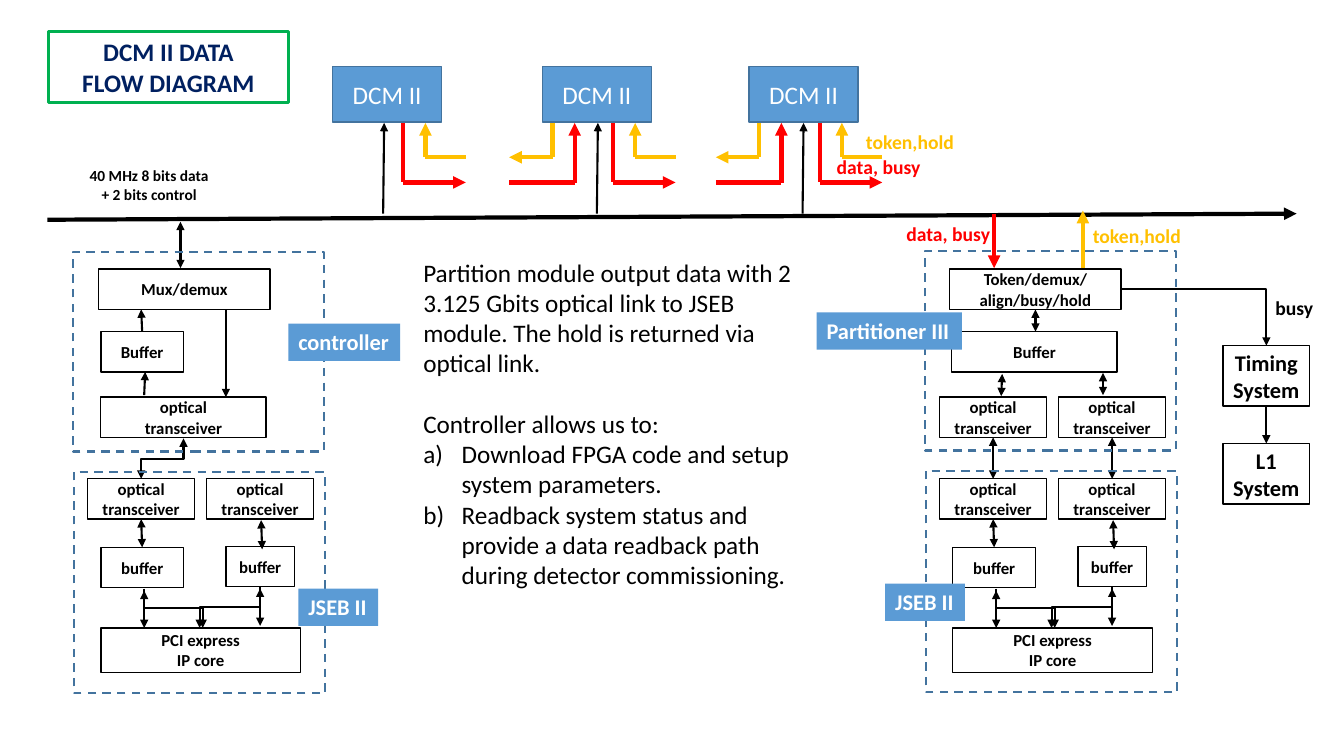
"""Builds the DCM II data flow diagram slide."""
from lxml.etree import SubElement
from pptx import Presentation
from pptx.dml.color import RGBColor
from pptx.enum.dml import MSO_LINE
from pptx.enum.shapes import MSO_CONNECTOR as LINK, MSO_SHAPE
from pptx.enum.text import MSO_ANCHOR, MSO_AUTO_SIZE, PP_ALIGN
from pptx.oxml.ns import qn
from pptx.util import Inches, Pt

BLACK, WHITE, RED, YELLOW = "000000", "FFFFFF", "FF0000", "FFC000"
BLUE, EDGE, NAVY, GREEN = "5B9BD5", "43739E", "002060", "00B050"
rgb = RGBColor.from_string

deck = Presentation()
deck.slide_width, deck.slide_height = Inches(13.33), Inches(7.5)
slide = deck.slides.add_slide(deck.slide_layouts[5])
shapes = slide.shapes


def write(holder, text, size, color, bold=True, align=PP_ALIGN.CENTER):
    frame = holder.text_frame
    frame.text = text
    for line in frame.paragraphs:
        line.alignment = align
        line.font.name, line.font.size, line.font.bold = "Calibri", Pt(size), bold
        line.font.color.rgb = rgb(color)
    return frame


def arrow(x1, y1, x2, y2, color=BLACK, width=1.5, ends="tail", kind=LINK.STRAIGHT):
    link = shapes.add_connector(kind, Inches(x1), Inches(y1), Inches(x2), Inches(y2))
    link.line.color.rgb, link.line.width = rgb(color), Pt(width)
    properties = link.element.spPr
    for end in ends.split():
        SubElement(properties.find(qn("a:ln")), qn(f"a:{end}End"), type="triangle")
    SubElement(properties, qn("a:effectLst"))
    return link


title = shapes.title
title.left, title.top, title.width, title.height = map(Inches, (0.48, 0.31, 2.38, 0.71))
title.line.color.rgb, title.line.width = rgb(GREEN), Pt(2)
title_frame = write(title, "DCM II DATA\nFLOW DIAGRAM", 18, NAVY)
title_frame.auto_size, title_frame.word_wrap = MSO_AUTO_SIZE.NONE, True
title_frame.vertical_anchor = MSO_ANCHOR.MIDDLE

arrow(0.47, 2.18, 12.86, 2.12, width=3)

modules = [(3.3, 3.8), (5.38, 5.92), (7.43, 7.96)]
transceiver = "optical\ntransceiver"
boxes = [
    ("Token/demux/\valign/busy/hold", 9.42, 2.67, 1.7, 0.4, 12),
    ("Buffer", 9.44, 3.29, 1.64, 0.4, 12),
    (transceiver, 9.32, 3.94, 1.06, 0.4, 12),
    (transceiver, 10.5, 3.94, 1.06, 0.4, 12),
    ("Timing\nSystem", 12.13, 3.43, 0.86, 0.6, 16),
    ("L1\nSystem", 12.13, 4.4, 0.86, 0.6, 16),
    ("Mux/demux", 0.98, 2.67, 1.7, 0.4, 12),
    ("Buffer", 1, 3.29, 0.82, 0.4, 12),
    (transceiver, 1, 3.94, 1.64, 0.4, 12),
]
side_offsets = (0, 8.45)
for dx in side_offsets:
    boxes += [
        (transceiver, 0.87 + dx, 4.75, 1.06, 0.4, 12),
        (transceiver, 2.05 + dx, 4.75, 1.06, 0.4, 12),
        ("buffer", 1 + dx, 5.43, 0.82, 0.4, 12),
        ("buffer", 2.24 + dx, 5.42, 0.68, 0.4, 12),
        ("PCI express\nIP core", 1 + dx, 6.23, 1.98, 0.44, 12),
    ]
boxes += [("DCM II", left, 0.66, 1.08, 0.55, 18) for left, _ in modules]
for text, x, y, w, h, size in boxes:
    is_module = text == "DCM II"
    box = shapes.add_shape(MSO_SHAPE.RECTANGLE, Inches(x), Inches(y), Inches(w), Inches(h))
    box.shadow.inherit = False
    box.fill.solid()
    box.fill.fore_color.rgb = rgb(BLUE if is_module else WHITE)
    box.line.color.rgb, box.line.width = rgb(EDGE if is_module else BLACK), Pt(1)
    frame = write(box, text, size, WHITE if is_module else BLACK, not is_module)
    frame.word_wrap, frame.vertical_anchor = True, MSO_ANCHOR.MIDDLE
    if size == 16:
        frame.margin_left = frame.margin_right = Inches(0.05)

for left, data_x in modules:
    arrow(data_x, 2.12, data_x + 0.01, 1.22)
    arrow(left + 1.32, 1.56, left + 0.92, 1.56, YELLOW, 3, "")
    arrow(left + 0.92, 1.56, left + 0.92, 1.22, YELLOW, 3)
    arrow(left + 0.7, 1.22, left + 0.7, 1.81, RED, 3, "")
    arrow(left + 0.7, 1.81, left + 1.32, 1.81, RED, 3)
for left, _ in modules[1:]:
    arrow(left + 0.1, 1.22, left + 0.1, 1.56, YELLOW, 3, "")
    arrow(left + 0.1, 1.56, left - 0.33, 1.56, YELLOW, 3)
    arrow(left - 0.33, 1.81, left + 0.32, 1.81, RED, 3, "")
    arrow(left + 0.32, 1.82, left + 0.32, 1.22, RED, 3)

arrow(9.86, 2.12, 9.86, 2.66, RED, 3)
arrow(10.74, 2.66, 10.74, 2.09, YELLOW, 3)
arrow(12.56, 4.03, 12.56, 4.4)
arrow(1.43, 3.92, 1.44, 3.69)
arrow(1.41, 3.29, 1.4, 3.07)
arrow(2.24, 3.07, 2.24, 3.94)

two_way = [
    (1.79, 2.66, 1.79, 2.2),
    (10.27, 3.07, 10.27, 3.29),
    (9.94, 3.71, 9.93, 3.93),
    (10.94, 3.7, 10.94, 3.92),
    (9.85, 4.34, 9.85, 4.75),
    (11.03, 4.34, 11.03, 4.75),
]
elbows = [(1.82, 4.35, 1.4, 4.75, "head tail")]
for dx in side_offsets:
    two_way += [
        (1.4 + dx, 5.15, 1.41 + dx, 5.43),
        (2.59 + dx, 5.16, 2.6 + dx, 5.45),
        (1.43 + dx, 5.86, 1.43 + dx, 6.23),
        (2.58 + dx, 5.84, 2.58 + dx, 6.21),
    ]
    elbows += [
        (1.43 + dx, 5.84, 2.01 + dx, 6.23, "tail"),
        (2.58 + dx, 5.82, 1.98 + dx, 6.23, "tail"),
    ]
for ends in two_way:
    arrow(*ends, ends="head tail")

for x1, y1, x2, y2, ends in elbows:
    center_x, center_y = (x1 + x2) / 2, (y1 + y2) / 2
    half_w, half_h = (y2 - y1) / 2, abs(x2 - x1) / 2
    turn = 1 if x2 > x1 else -1
    elbow = arrow(center_x + turn * half_w, center_y - half_h,
                  center_x - turn * half_w, center_y + half_h,
                  ends=ends, kind=LINK.ELBOW)
    elbow.element.spPr.find(qn("a:xfrm")).set("rot", "16200000" if turn > 0 else "5400000")

busy_link = arrow(11.12, 2.87, 12.56, 3.43, kind=LINK.ELBOW)
busy_link.element.spPr.find(qn("a:prstGeom")).set("prst", "bentConnector2")

for x, y, h in [(0.72, 2.5, 1.98), (0.73, 4.68, 2.2), (9.17, 2.49, 1.98), (9.18, 4.67, 2.2)]:
    group_frame = shapes.add_shape(MSO_SHAPE.RECTANGLE, Inches(x), Inches(y), Inches(2.49), Inches(h))
    group_frame.shadow.inherit = False
    group_frame.fill.background()
    group_frame.line.color.rgb, group_frame.line.width = rgb(EDGE), Pt(1.5)
    group_frame.line.dash_style = MSO_LINE.DASH

labels = [
    ("token,hold", 8.49, 1.24, 1.08, 0.34, 14, YELLOW, None),
    ("data, busy", 8.2, 1.49, 1.08, 0.34, 14, RED, None),
    ("data, busy", 8.89, 2.15, 1.08, 0.34, 14, RED, None),
    ("token,hold", 10.74, 2.17, 1.08, 0.34, 14, YELLOW, None),
    ("busy", 12.55, 2.89, 0.58, 0.34, 14, BLACK, None),
    ("controller", 2.86, 3.21, 1.11, 0.37, 16, WHITE, BLUE),
    ("JSEB II", 2.96, 5.84, 0.79, 0.37, 16, WHITE, BLUE),
    ("JSEB II", 8.78, 5.79, 0.79, 0.37, 16, WHITE, BLUE),
    ("Partitioner III", 8.1, 3.1, 1.44, 0.37, 16, WHITE, BLUE),
    ("40 MHz 8 bits data\n+ 2 bits control", 0.78, 1.6, 1.4, 0.47, 11, BLACK, None),
]
for text, x, y, w, h, size, color, fill in labels:
    label = shapes.add_textbox(Inches(x), Inches(y), Inches(w), Inches(h))
    write(label, text, size, color, align=PP_ALIGN.CENTER if size == 11 else PP_ALIGN.LEFT)
    label.text_frame.word_wrap = False
    if fill:
        label.fill.solid()
        label.fill.fore_color.rgb = rgb(fill)

description = shapes.add_textbox(Inches(4.1), Inches(2.5), Inches(3.86), Inches(3.74))
description.text_frame.word_wrap = True
description_text = "\n".join([
    "Partition module output data with 2 3.125 Gbits optical link to JSEB module. "
    "The hold is returned via optical link.",
    "Controller allows us to:",
    "Download FPGA code and setup system parameters.",
    "Readback system status and provide a data readback path during detector commissioning.",
])
paragraphs = write(description, description_text, 18, BLACK, False, PP_ALIGN.LEFT).paragraphs
paragraphs[1].space_before = Pt(21.6)
for item in paragraphs[2:]:
    settings = item.font and item.runs[0].font and item.runs[0]
    properties = item.runs[0].font and item.line_spacing
for item in paragraphs[2:]:
    item.level = 0
    numbering = description.element.findall(".//" + qn("a:pPr"))[paragraphs.index(item)]
    numbering.set("marL", str(Inches(0.38)))
    numbering.set("indent", str(-Inches(0.38)))
    bullet = SubElement(numbering, qn("a:buAutoNum"), type="alphaLcParenR")
    numbering.find(qn("a:defRPr")).addprevious(bullet)

deck.save("out.pptx")
